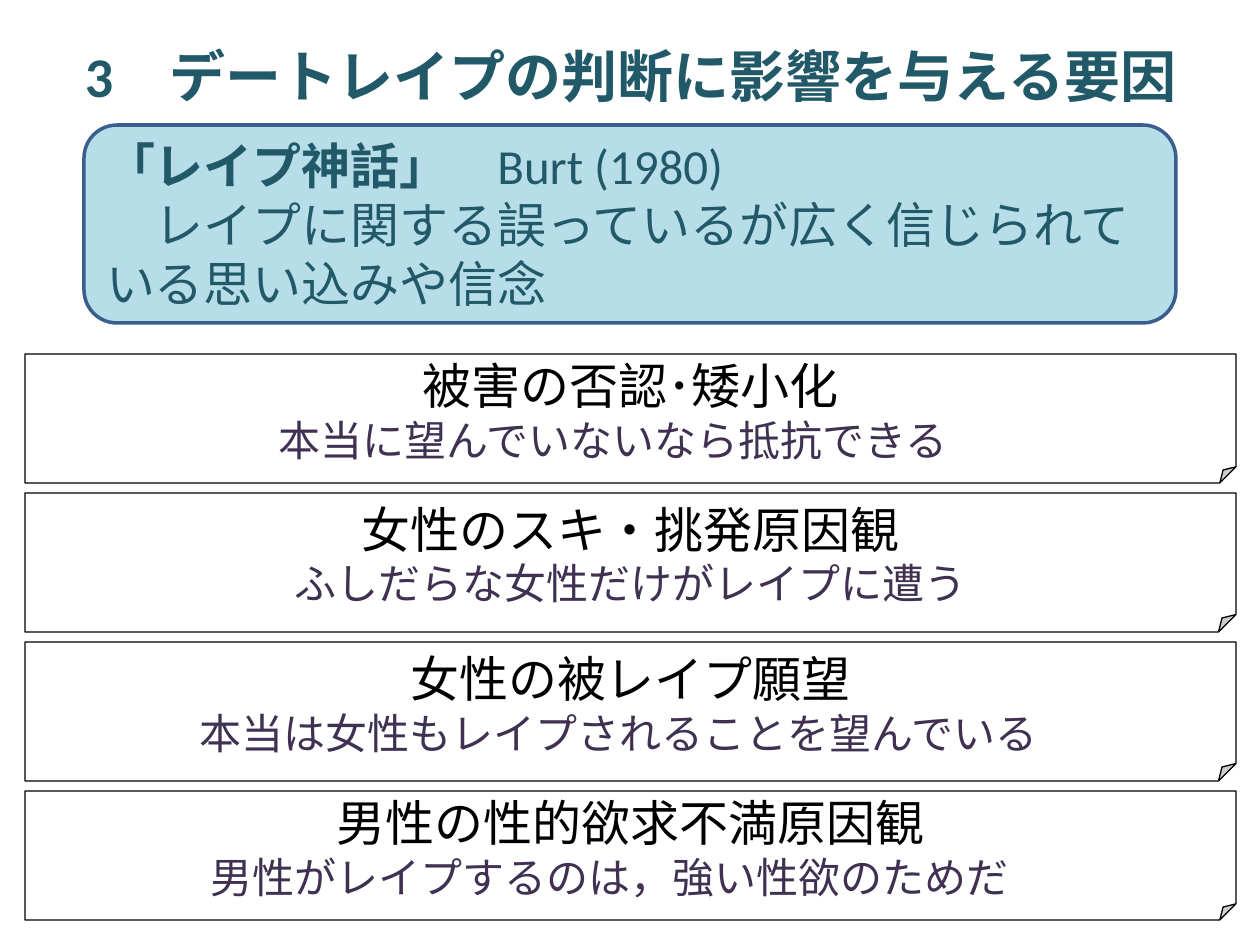
from lxml import etree
from pptx import Presentation
from pptx.dml.color import RGBColor
from pptx.enum.shapes import MSO_SHAPE
from pptx.enum.text import MSO_ANCHOR, PP_ALIGN
from pptx.oxml.ns import qn
from pptx.util import Emu, Pt

ROUNDED = MSO_SHAPE.ROUNDED_RECTANGLE
FOLDED = MSO_SHAPE.FOLDED_CORNER
MIDDLE = MSO_ANCHOR.MIDDLE
LEFT, CENTER = PP_ALIGN.LEFT, PP_ALIGN.CENTER
PX = 914400 / 126

TEAL, PURPLE, BLACK = "215968", "403152", "000000"
HEADING = {"name": "Calibri", "size": Pt(32), "bold": True, "color": TEAL}
TERM = {"name": "Calibri", "size": Pt(28), "bold": True, "color": TEAL}
DEFINITION = {**TERM, "bold": False}
MYTH = {"name": "DejaVu Sans", "size": Pt(28), "color": BLACK}
BELIEF = {"name": "Calibri", "size": Pt(24), "color": PURPLE}
LAST_BELIEF = {**BELIEF, "name": "DejaVu Sans"}
TAIL_20 = {**LAST_BELIEF, "size": Pt(20)}
TAIL_14 = {**LAST_BELIEF, "size": Pt(14)}

TITLE = [[("3　デートレイプの判断に影響を与える要因", HEADING)]]
RAPE_MYTH = [
    [("「レイプ神話」　", TERM), ("Burt (1980)", DEFINITION)],
    [("　レイプに関する誤っているが広く信じられている思い込みや信念", DEFINITION)],
]
MYTH_CARDS = [
    (129, "被害の否認･矮小化",
     [("本当に望んでいないなら抵抗できる", BELIEF), ("　", TAIL_20)]),
    (139, "女性のスキ・挑発原因観",
     [("ふしだらな女性だけがレイプに遭う", BELIEF)]),
    (139, "女性の被レイプ願望",
     [("本当は女性もレイプされることを望んでいる", BELIEF), ("　", TAIL_14)]),
    (129, "男性の性的欲求不満原因観",
     [("男性がレイプするのは，強い性欲のためだ　", LAST_BELIEF)]),
]
CARD_LEFT, CARD_TOP, CARD_WIDTH, CARD_GAP = 25, 354, 1211, 10


def px(length):
    return Emu(round(length * PX))


def rgb(color):
    return RGBColor.from_string(color)


def write(frame, paragraphs, align, wrap):
    frame.vertical_anchor = MIDDLE
    frame.word_wrap = wrap
    for index, runs in enumerate(paragraphs):
        paragraph = frame.add_paragraph() if index else frame.paragraphs[0]
        paragraph.alignment = align
        for text, style in runs:
            run = paragraph.add_run()
            run.text = text
            for key, value in style.items():
                if key == "color":
                    run.font.color.rgb = rgb(value)
                else:
                    setattr(run.font, key, value)


def add_box(slide, kind, box, fill, line, line_width):
    shape = slide.shapes.add_shape(kind, *map(px, box))
    shape.shadow.inherit = False
    shape.fill.solid()
    shape.fill.fore_color.rgb = rgb(fill)
    shape.line.color.rgb = rgb(line)
    shape.line.width = Pt(line_width)
    return shape


def set_fold(card, share):
    geometry = card.element.spPr.find(qn("a:prstGeom"))
    guides = geometry.find(qn("a:avLst"))
    etree.SubElement(guides, qn("a:gd"), name="adj", fmla=f"val {round(share * 100000)}")


def main():
    deck = Presentation()
    deck.slide_width, deck.slide_height = px(1260), px(945)
    slide = deck.slides.add_slide(deck.slide_layouts[5])

    title = slide.shapes.title
    title.left, title.top, title.width, title.height = map(px, (64, 26, 1134, 98))
    write(title.text_frame, TITLE, CENTER, True)

    definition = add_box(slide, ROUNDED, (84, 125, 1092, 198), "B7DEE8", "3A5F8C", 2)
    write(definition.text_frame, RAPE_MYTH, LEFT, True)

    top = CARD_TOP
    for height, myth, belief in MYTH_CARDS:
        card = add_box(slide, FOLDED, (CARD_LEFT, top, CARD_WIDTH, height),
                       "FFFFFF", BLACK, 0.75)
        set_fold(card, 0.125)
        write(card.text_frame, [[(myth, MYTH)], belief], CENTER, False)
        top += height + CARD_GAP

    deck.save("out.pptx")


if __name__ == "__main__":
    main()
